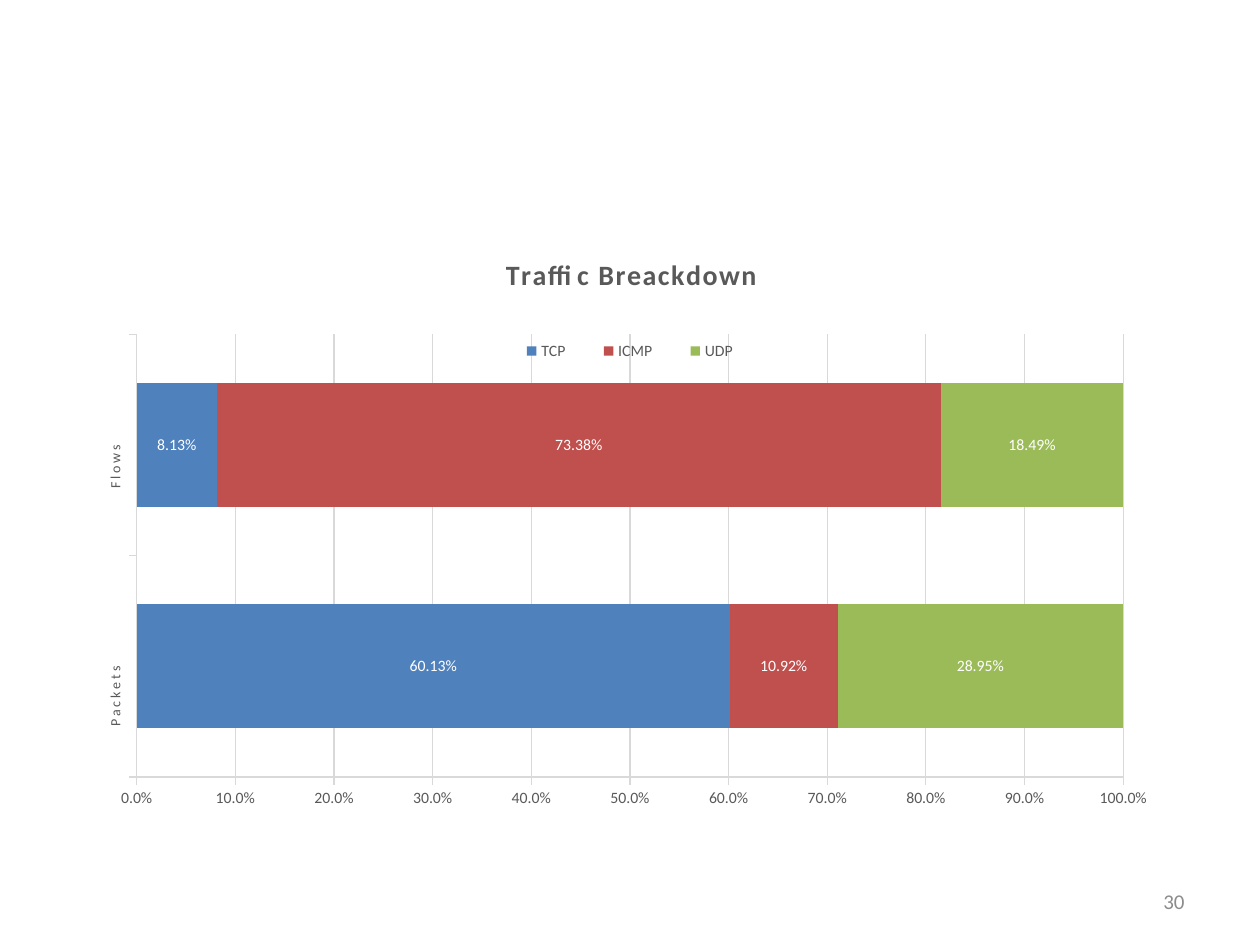
from pptx import Presentation
from pptx.chart.data import CategoryChartData as Data
from pptx.dml.color import RGBColor as RGB
from pptx.enum.chart import XL_CHART_TYPE as Kind, XL_LABEL_POSITION as Spot
from pptx.enum.chart import XL_LEGEND_POSITION as Side, XL_TICK_MARK as Tick
from pptx.enum.text import MSO_ANCHOR as Anchor, PP_ALIGN as Align
from pptx.oxml import parse_xml
from pptx.oxml.ns import nsdecls, qn
from pptx.util import Emu, Pt

TITLE = "Traffic Breackdown"
PAGE = "30"
CATS = ["Packets", "Flows"]
SERIES = [
    ("TCP", [0.6013, 0.0813], "4F81BD"),
    ("ICMP", [0.1092, 0.7338], "C0504D"),
    ("UDP", [0.2895, 0.1849], "9BBB59"),
]
THEME = {
    "font": "Calibri", "ink": "595959", "grid": "D9D9D9", "white": "FFFFFF",
    "mute": "8C8C8C", "title": 16, "label": 9, "cat": 8, "page": 12, "line": 0.75,
}
CHART = (63, 220, 1134, 624)
NUMBER = (903, 876, 294, 50)
PLOT = {"x": 0.065, "y": 0.183, "w": 0.87, "h": 0.71}
HEAD = {"x": 0.386, "y": 0.05}
KEY = {"x": 0.38, "y": 0.19, "w": 0.24, "h": 0.04}


def px(box):
    return [Emu(round(n * 914400 / 126)) for n in box]


def style(font, size, color="ink", bold=False, gap=0):
    font.name = THEME["font"]
    font.size = Pt(THEME[size])
    font.bold = bold
    font.color.rgb = RGB.from_string(THEME[color])
    if gap:
        font._rPr.set("spc", str(gap))


def write(frame, text, align=Align.CENTER, **form):
    par = frame.paragraphs[0]
    par.alignment = align
    run = par.add_run()
    run.text = text
    style(run.font, **form)


def rule(line):
    line.color.rgb = RGB.from_string(THEME["grid"])
    line.width = Pt(THEME["line"])


def place(node, spots, inner=False):
    for old in node.findall(qn("c:layout")):
        node.remove(old)
    body = '<c:layoutTarget val="inner"/>' if inner else ""
    body += "".join(f'<c:{k}Mode val="edge"/>' for k in "xy")
    body += "".join(f'<c:{k} val="{v}"/>' for k, v in spots.items())
    part = parse_xml(
        f'<c:layout {nsdecls("c")}><c:manualLayout>{body}</c:manualLayout></c:layout>')
    over = node.find(qn("c:overlay"))
    if over is None:
        node.insert(0, part)
    else:
        over.addprevious(part)


def draw(slide):
    data = Data(number_format="0.00%")
    data.categories = CATS
    for name, vals, _ in SERIES:
        data.add_series(name, vals)
    chart = slide.shapes.add_chart(Kind.BAR_STACKED, *px(CHART), data).chart
    style(chart.font, "label")

    chart.has_title = True
    write(chart.chart_title.text_frame, TITLE, size="title", bold=True, gap=100)
    place(chart.chart_title._element, HEAD)
    chart.has_legend = True
    key = chart.legend
    key.position = Side.TOP
    key.include_in_layout = False
    style(key.font, "label")
    place(key._element, KEY)
    place(chart._chartSpace.chart.plotArea, PLOT, inner=True)

    plot = chart.plots[0]
    plot.gap_width = 79
    plot.overlap = 100
    plot.vary_by_categories = False
    for bar, (_, _, color) in zip(plot.series, SERIES):
        bar.format.fill.solid()
        bar.format.fill.fore_color.rgb = RGB.from_string(color)
        tags = bar.data_labels
        tags.show_value = True
        tags.position = Spot.CENTER
        tags.number_format = "0.00%"
        tags.number_format_is_linked = False
        style(tags.font, "label", "white")

    cat, val = chart.category_axis, chart.value_axis
    for axis in (cat, val):
        axis.major_tick_mark = Tick.OUTSIDE
        axis.minor_tick_mark = Tick.NONE
        rule(axis.format.line)
    style(cat.tick_labels.font, "cat", gap=150)
    cat._element.find(qn("c:txPr")).find(qn("a:bodyPr")).set("rot", "-5400000")
    style(val.tick_labels.font, "label")
    val.tick_labels.number_format = "0.0%"
    val.tick_labels.number_format_is_linked = False
    val.minimum_scale, val.maximum_scale, val.major_unit = 0, 1, 0.1
    val.has_major_gridlines = True
    rule(val.major_gridlines.format.line)


def main():
    deck = Presentation()
    deck.slide_width, deck.slide_height = px((1260, 945))
    slide = deck.slides.add_slide(deck.slide_layouts[6])
    draw(slide)
    frame = slide.shapes.add_textbox(*px(NUMBER)).text_frame
    frame.word_wrap = True
    frame.vertical_anchor = Anchor.MIDDLE
    write(frame, PAGE, Align.RIGHT, size="page", color="mute")
    deck.save("out.pptx")


if __name__ == "__main__":
    main()
